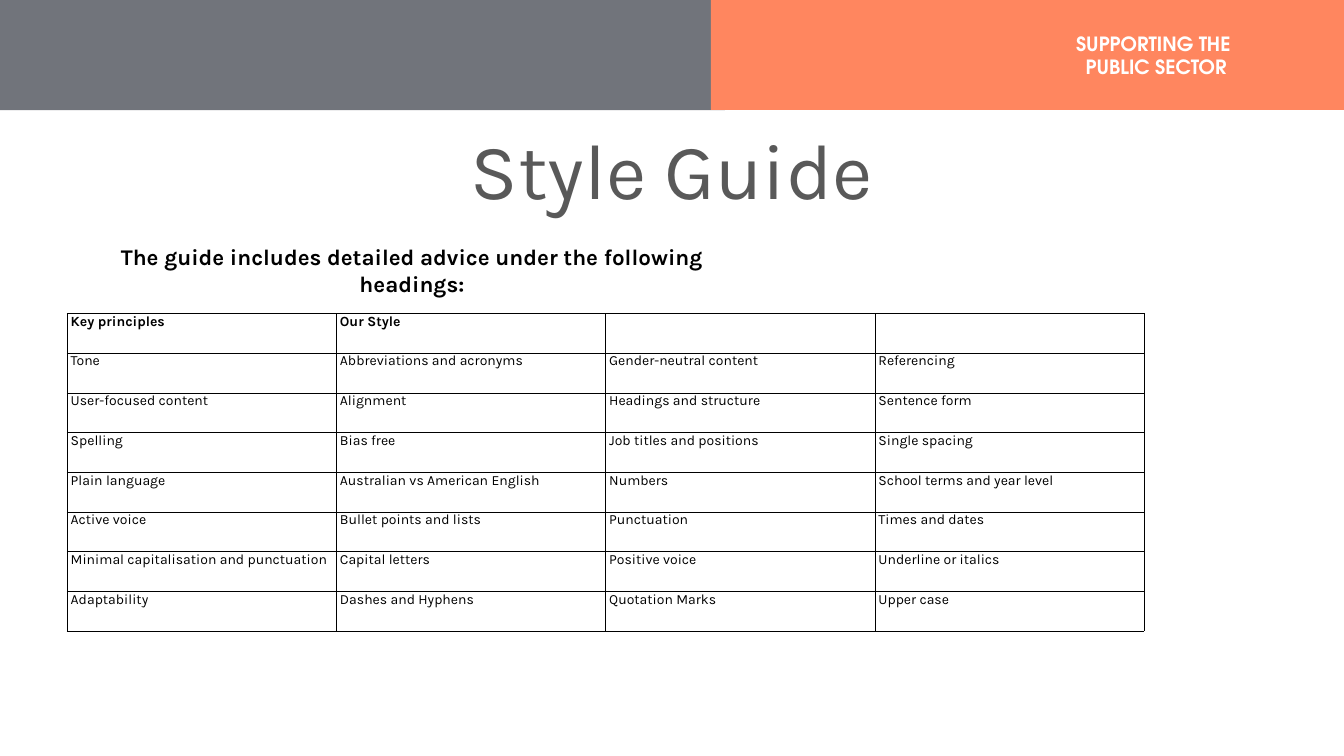
import pptx
import pptx.util
import pptx.dml.color
import pptx.enum.shapes
import pptx.enum.text
from lxml import etree
from pptx.util import Pt

RGB = pptx.dml.color.RGBColor.from_string
ALIGN = pptx.enum.text.PP_ALIGN
ANCHOR = pptx.enum.text.MSO_ANCHOR

THEME = {
    "grey": RGB("71747B"), "orange": RGB("FF865F"),
    "body": {"name": "Karla", "size": Pt(20), "bold": False, "color": RGB("000000")},
    "head": {"name": "Karla", "size": Pt(20), "bold": True, "color": RGB("000000")},
    "intro": {"name": "Karla", "size": Pt(32), "bold": True, "color": RGB("000000")},
    "title": {"name": "Karla", "size": Pt(112), "bold": False, "color": RGB("595959")},
    "tagline": {"name": "TeX Gyre Adventor", "size": Pt(28), "bold": True,
                "color": RGB("FFFFFF")},
}


def write(frame, lines, style, align, space_after=0):
    """Fill a text frame with one paragraph per line in a theme style."""
    for i, line in enumerate(lines):
        paragraph = frame.paragraphs[0] if i == 0 else frame.add_paragraph()
        paragraph.alignment = align
        paragraph.space_after = Pt(space_after)
        run = paragraph.add_run()
        run.text = line
        for key, value in THEME[style].items():
            if key == "color":
                run.font.color.rgb = value
            else:
                setattr(run.font, key, value)


def add_borders(cell):
    """Draw a thin black line on all four sides of a cell."""
    properties = cell._tc.get_or_add_tcPr()
    namespace = "http://schemas.openxmlformats.org/drawingml/2006/main"
    for position, side in enumerate(("lnL", "lnR", "lnT", "lnB")):
        line = etree.fromstring(
            f'<a:{side} xmlns:a="{namespace}" w="{Pt(1)}"><a:solidFill>'
            f'<a:srgbClr val="000000"/></a:solidFill></a:{side}>')
        properties.insert(position, line)


deck = pptx.Presentation()
deck.slide_width, deck.slide_height = Pt(1920), Pt(1080)
slide = deck.slides.add_slide(deck.slide_layouts[6])

# Header band
for left, top, width, color in ((0, 0, 1035.4, "grey"), (1015.4, -0.5, 904.6, "orange")):
    band = slide.shapes.add_shape(pptx.enum.shapes.MSO_SHAPE.RECTANGLE,
                                  Pt(left), Pt(top), Pt(width), Pt(157.5))
    band.shadow.inherit = False
    band.fill.solid()
    band.fill.fore_color.rgb = THEME[color]
    band.line.fill.background()

# Tagline, title and introduction
texts = (
    ((1527, 39, 249, 79), ("SUPPORTING THE ", "PUBLIC SECTOR"), "tagline", 0,
     {"word_wrap": False, "vertical_anchor": ANCHOR.MIDDLE, "margin_left": Pt(6),
      "margin_right": Pt(6), "margin_top": Pt(6), "margin_bottom": Pt(6)}),
    ((96, 163.5, 1728, 180), ("Style Guide",), "title", 0,
     {"word_wrap": True, "margin_top": Pt(10)}),
    ((96, 343.5, 985, 46), ("The guide includes detailed advice under the following headings:",),
     "intro", 6, {"word_wrap": True}),
)
for box, lines, style, space_after, settings in texts:
    frame = slide.shapes.add_textbox(*map(Pt, box)).text_frame
    for key, value in settings.items():
        setattr(frame, key, value)
    write(frame, lines, style, ALIGN.CENTER, space_after)

# Table of guide headings
headings = (
    ("Key principles", "Our Style", "", ""),
    ("Tone", "Abbreviations and acronyms", "Gender-neutral content", "Referencing"),
    ("User-focused content", "Alignment", "Headings and structure", "Sentence form"),
    ("Spelling", "Bias free", "Job titles and positions", "Single spacing"),
    ("Plain language", "Australian vs American English", "Numbers",
     "School terms and year level"),
    ("Active voice", "Bullet points and lists", "Punctuation", "Times and dates"),
    ("Minimal capitalisation and punctuation", "Capital letters", "Positive voice",
     "Underline or italics"),
    ("Adaptability", "Dashes and Hyphens", "Quotation Marks", "Upper case"),
)
guide = slide.shapes.add_table(len(headings), len(headings[0]), Pt(96), Pt(447.8),
                               Pt(1538.6), Pt(453.6)).table
guide.first_row = guide.horz_banding = False
cell_margins = {"margin_left": Pt(5), "margin_right": Pt(5), "margin_top": 0,
                "margin_bottom": 0}
for r, row in enumerate(headings):
    for c, heading in enumerate(row):
        cell = guide.cell(r, c)
        cell.fill.background()
        add_borders(cell)
        for key, value in cell_margins.items():
            setattr(cell, key, value)
        if heading:
            write(cell.text_frame, (heading,), "body" if r else "head", ALIGN.LEFT, 6)

deck.save("out.pptx")
